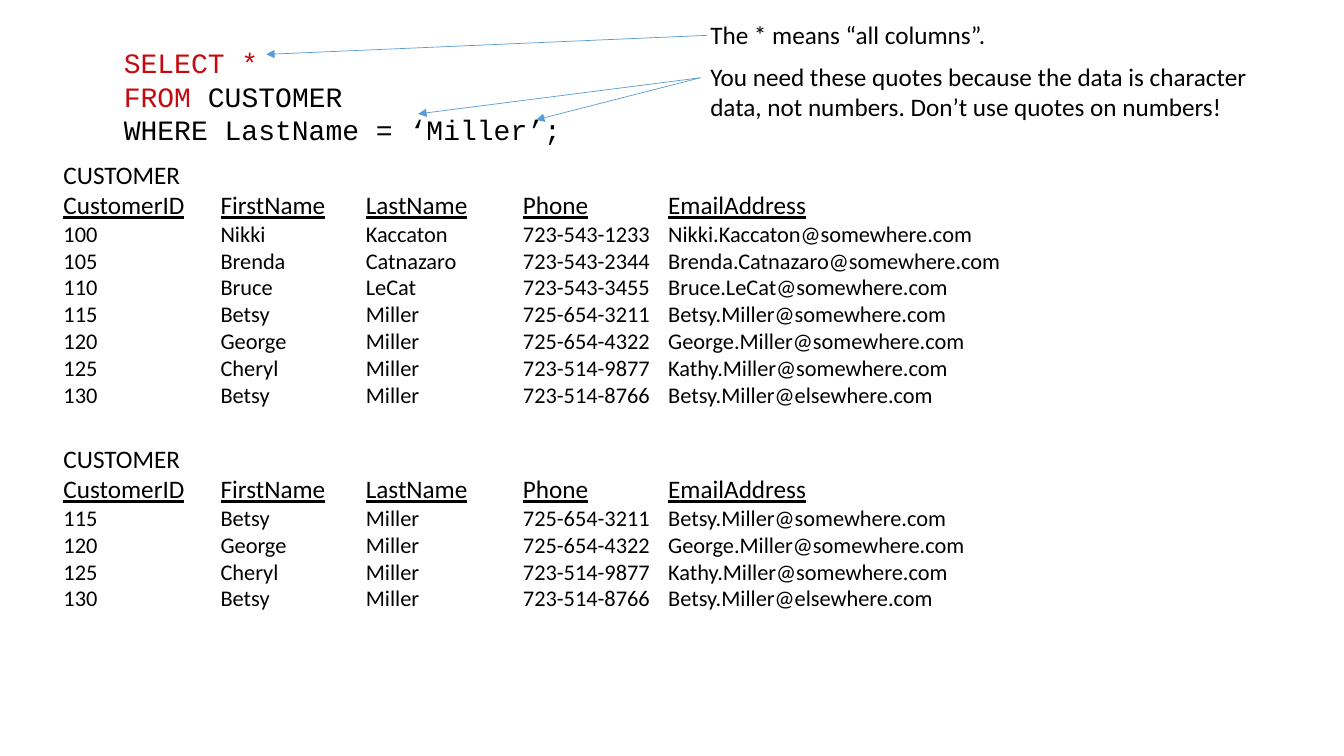
from lxml.etree import SubElement
from pptx import Presentation
from pptx.dml.color import RGBColor
from pptx.enum.shapes import MSO_CONNECTOR
from pptx.enum.text import MSO_AUTO_SIZE
from pptx.oxml.ns import qn
from pptx.util import Cm, Pt

BLACK = RGBColor(0x00, 0x00, 0x00)
RED = RGBColor(0xC5, 0x0A, 0x0F)
BLUE = RGBColor(0x5B, 0x9B, 0xD5)

TAB_STOPS = [3.96, 7.62, 11.58, 15.24]
COLUMNS = ["CustomerID", "FirstName", "LastName", "Phone", "EmailAddress"]
CUSTOMERS = [
    ["100", "Nikki", "Kaccaton", "723-543-1233", "Nikki.Kaccaton@somewhere.com"],
    ["105", "Brenda", "Catnazaro", "723-543-2344", "Brenda.Catnazaro@somewhere.com"],
    ["110", "Bruce", "LeCat", "723-543-3455", "Bruce.LeCat@somewhere.com"],
    ["115", "Betsy", "Miller", "725-654-3211", "Betsy.Miller@somewhere.com"],
    ["120", "George", "Miller", "725-654-4322", "George.Miller@somewhere.com"],
    ["125", "Cheryl", "Miller", "723-514-9877", "Kathy.Miller@somewhere.com"],
    ["130", "Betsy", "Miller", "723-514-8766", "Betsy.Miller@elsewhere.com"],
]
QUERY = [
    [("SELECT *", RED)],
    [("FROM ", RED), ("CUSTOMER", BLACK)],
    [("WHERE LastName = ‘Miller’;", BLACK)],
]


def add_text_frame(slide, left, top, width, height, wrap=True):
    shape = slide.shapes.add_textbox(Cm(left), Cm(top), Cm(width), Cm(height))
    frame = shape.text_frame
    frame.word_wrap = wrap
    frame.auto_size = MSO_AUTO_SIZE.SHAPE_TO_FIT_TEXT
    return frame


def next_paragraph(frame, index):
    return frame.add_paragraph() if index else frame.paragraphs[0]


def format_font(paragraph, name, size, color=None):
    paragraph.font.name = name
    paragraph.font.size = Pt(size)
    if color is not None:
        paragraph.font.color.rgb = color


def add_tab_stops(paragraph):
    properties = paragraph._p.get_or_add_pPr()
    tab_list = SubElement(properties, qn("a:tabLst"))
    for position in TAB_STOPS:
        SubElement(tab_list, qn("a:tab"), pos=str(Cm(position)), algn="l")


def add_listing(slide, left, top, width, height, customers):
    frame = add_text_frame(slide, left, top, width, height)
    for index, cells in enumerate([["CUSTOMER"], COLUMNS, *customers]):
        paragraph = next_paragraph(frame, index)
        paragraph.text = "\t".join(cells)
        if index > 0:
            add_tab_stops(paragraph)
        format_font(paragraph, "Calibri", 18 if index < 2 else 16, BLACK)
        paragraph.font.underline = index == 1


def add_query(slide, left, top, width, height):
    frame = add_text_frame(slide, left, top, width, height, wrap=False)
    for index, pieces in enumerate(QUERY):
        paragraph = next_paragraph(frame, index)
        format_font(paragraph, "Courier New", 20)
        for text, color in pieces:
            run = paragraph.add_run()
            run.text = text
            run.font.color.rgb = color


def add_arrow(slide, start, end):
    points = [Cm(length) for length in (*start, *end)]
    connector = slide.shapes.add_connector(MSO_CONNECTOR.STRAIGHT, *points)
    connector.line.color.rgb = BLUE
    connector.line.width = Pt(0.5)
    SubElement(connector.line._get_or_add_ln(), qn("a:tailEnd"), type="triangle")
    SubElement(connector._element.spPr, qn("a:effectLst"))


def add_note(slide, left, top, width, height, text, arrow_offset, targets):
    paragraph = add_text_frame(slide, left, top, width, height).paragraphs[0]
    paragraph.text = text
    format_font(paragraph, "Calibri", 18, BLACK)
    start = (left + arrow_offset[0], top + arrow_offset[1])
    for target in targets:
        add_arrow(slide, start, target)


def main():
    presentation = Presentation()
    presentation.slide_width = Cm(33.87)
    presentation.slide_height = Cm(19.05)
    slide = presentation.slides.add_slide(presentation.slide_layouts[6])

    millers = [customer for customer in CUSTOMERS if customer[2] == "Miller"]
    add_listing(slide, 1.35, 3.89, 26.49, 6.58, CUSTOMERS)
    add_query(slide, 2.87, 1.02, 11.63, 2.82)
    add_listing(slide, 1.35, 11.05, 26.49, 4.52, millers)
    add_note(slide, 17.65, 0.36, 10.57, 1.02, "The * means “all columns”.",
             (0.18, 0.53), [(6.71, 1.37)])
    add_note(slide, 17.65, 1.42, 14.17, 1.8,
             "You need these quotes because the data is character data, "
             "not numbers. Don’t use quotes on numbers!",
             (0, 0.54), [(13.51, 3.02), (10.54, 2.87)])

    presentation.save("out.pptx")


if __name__ == "__main__":
    main()
